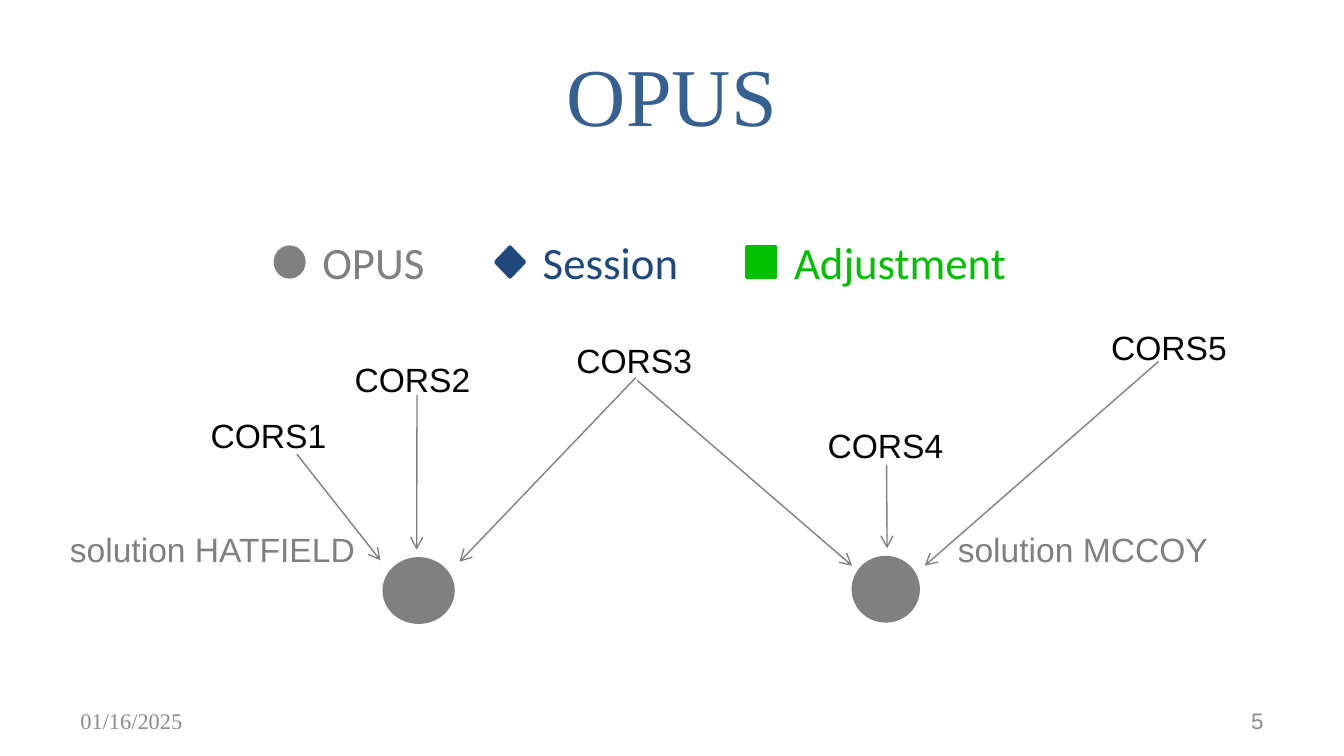
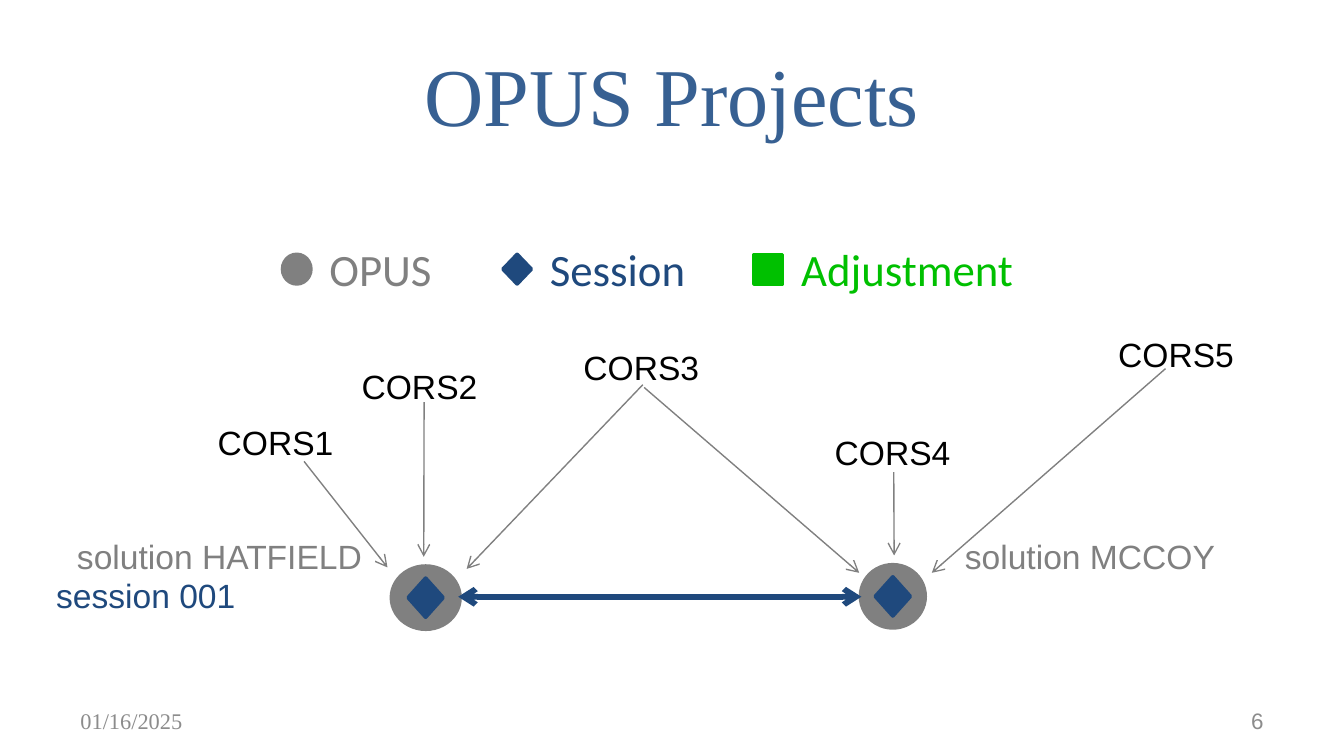
"""Two slides on OPUS solutions and sessions, sharing one station network."""
import pptx
import pptx.chart.data
import pptx.dml.color
import pptx.enum.shapes
import pptx.enum.text
import pptx.oxml.ns
import pptx.util
from lxml import etree

Pt = pptx.util.Pt
SHAPE = pptx.enum.shapes.MSO_SHAPE
ALIGN = pptx.enum.text.PP_ALIGN
ANCHOR = pptx.enum.text.MSO_ANCHOR
AUTO_SIZE = pptx.enum.text.MSO_AUTO_SIZE

COLORS = {
    "title": "376092",
    "opus": "808080",
    "session": "1F497D",
    "adjustment": "00C000",
    "station": "000000",
    "footer": "8C8C8C",
}
RGB = {name: pptx.dml.color.RGBColor.from_string(code) for name, code in COLORS.items()}

STYLES = {
    "title": {"name": "Times New Roman", "size": Pt(44)},
    "legend": {"name": "Calibri", "size": Pt(24)},
    "label": {"name": "Arial", "size": Pt(18)},
    "date": {"name": "Times New Roman", "size": Pt(12)},
    "number": {"name": "Arial", "size": Pt(12)},
}

SLIDES = [
    {"title": "OPUS", "number": "5", "shift": 0, "session": False},
    {"title": "OPUS Projects", "number": "6", "shift": 3.8, "session": True},
]
LEGEND = [
    ("OPUS", "opus", SHAPE.OVAL, 147.6, 70),
    ("Session", "session", SHAPE.DIAMOND, 265.7, 88),
    ("Adjustment", "adjustment", SHAPE.RECTANGLE, 400.3, 129),
]
CIRCLES = [(205.9, 299.5, 36.7, 33.8), (457.2, 298.8, 34.6, 33.8)]
VECTORS = [
    (340.6, 202.3, 246.2, 301),
    (159.1, 243.4, 203.8, 300.2),
    (223.4, 211.7, 223.2, 294.5),
    (620.6, 193.7, 495.4, 303.1),
    (341.3, 203.8, 456.5, 303.1),
    (475, 249.1, 475.2, 293.8),
]
STATIONS = [(105.8, 218.9), (182.9, 188.6), (301.7, 178.6), (436.3, 223.9), (588.2, 171.4)]
SOLUTIONS = [("solution HATFIELD", 30.4, 168.5), ("solution MCCOY", 506, 149.8)]
DIAMOND_WIDTH, DIAMOND_HEIGHT = 18.7, 20.9


def add_text(page, text, style, color, left, top, width, height, align=ALIGN.LEFT, fixed=False):
    box = page.shapes.add_textbox(Pt(left), Pt(top), Pt(width), Pt(height))
    frame_format = {
        "word_wrap": fixed,
        "auto_size": AUTO_SIZE.NONE if fixed else AUTO_SIZE.SHAPE_TO_FIT_TEXT,
        "vertical_anchor": ANCHOR.MIDDLE if fixed else ANCHOR.TOP,
    }
    for name, value in frame_format.items():
        setattr(box.text_frame, name, value)
    para = box.text_frame.paragraphs[0]
    para.alignment = align
    span = para.add_run()
    span.text = text
    for name, value in STYLES[style].items():
        setattr(span.font, name, value)
    span.font.color.rgb = RGB[color]


def add_marker(page, kind, color, left, top, width, height):
    marker = page.shapes.add_shape(kind, Pt(left), Pt(top), Pt(width), Pt(height))
    marker.shadow.inherit = False
    for fill in (marker.fill, marker.line.fill):
        fill.solid()
        fill.fore_color.rgb = RGB[color]
    marker.line.width = Pt(2)


deck = pptx.Presentation()
deck.slide_width, deck.slide_height = Pt(720), Pt(405)

for content in SLIDES:
    page = deck.slides.add_slide(deck.slide_layouts[6])
    shift = content["shift"]
    add_text(page, content["title"], "title", "title", 36, 16.5, 648, 67.5, ALIGN.CENTER, True)

    for left, top, width, height in CIRCLES:
        add_marker(page, SHAPE.OVAL, "opus", left + shift, top + shift, width, height)

    arrows = [(vector, "opus", 0.75, ["tailEnd"]) for vector in VECTORS]
    if content["session"]:
        arrows.append(((241.7, 315.9, 457.7, 315.9), "session", 3, ["headEnd", "tailEnd"]))
    for ends, color, weight, heads in arrows:
        arrow = page.shapes.add_connector(
            pptx.enum.shapes.MSO_CONNECTOR.STRAIGHT, *[Pt(end + shift) for end in ends]
        )
        arrow.line.color.rgb = RGB[color]
        arrow.line.width = Pt(weight)
        line = arrow.line._get_or_add_ln()
        for head in heads:
            etree.SubElement(line, pptx.oxml.ns.qn("a:" + head), type="arrow")
        etree.SubElement(arrow._element.spPr, pptx.oxml.ns.qn("a:effectLst"))

    if content["session"]:
        for left, top, width, height in CIRCLES:
            add_marker(
                page, SHAPE.DIAMOND, "session",
                left + shift + (width - DIAMOND_WIDTH) / 2,
                top + shift + (height - DIAMOND_HEIGHT) / 2,
                DIAMOND_WIDTH, DIAMOND_HEIGHT,
            )
        add_text(page, "session 001", "label", "session", 23, 304.6, 114.5, 29)

    for text, left, width in SOLUTIONS:
        add_text(page, text, "label", "opus", left + shift, 280 + shift, width, 29)

    for text, color, kind, left, width in LEGEND:
        add_marker(page, kind, color, left + shift, 132.5 + shift, 15.1, 15.8)
        add_text(page, text, "legend", color, left + 18 + shift, 122 + shift, width, 36)

    for number, (left, top) in enumerate(STATIONS, 1):
        add_text(page, f"CORS{number}", "label", "station", left + shift, top + shift, 77, 29)

    add_text(page, "01/16/2025", "date", "footer", 36, 375, 168, 21.6, fixed=True)
    add_text(page, content["number"], "number", "footer", 516, 375, 168, 21.6, ALIGN.RIGHT, True)

deck.save("out.pptx")
